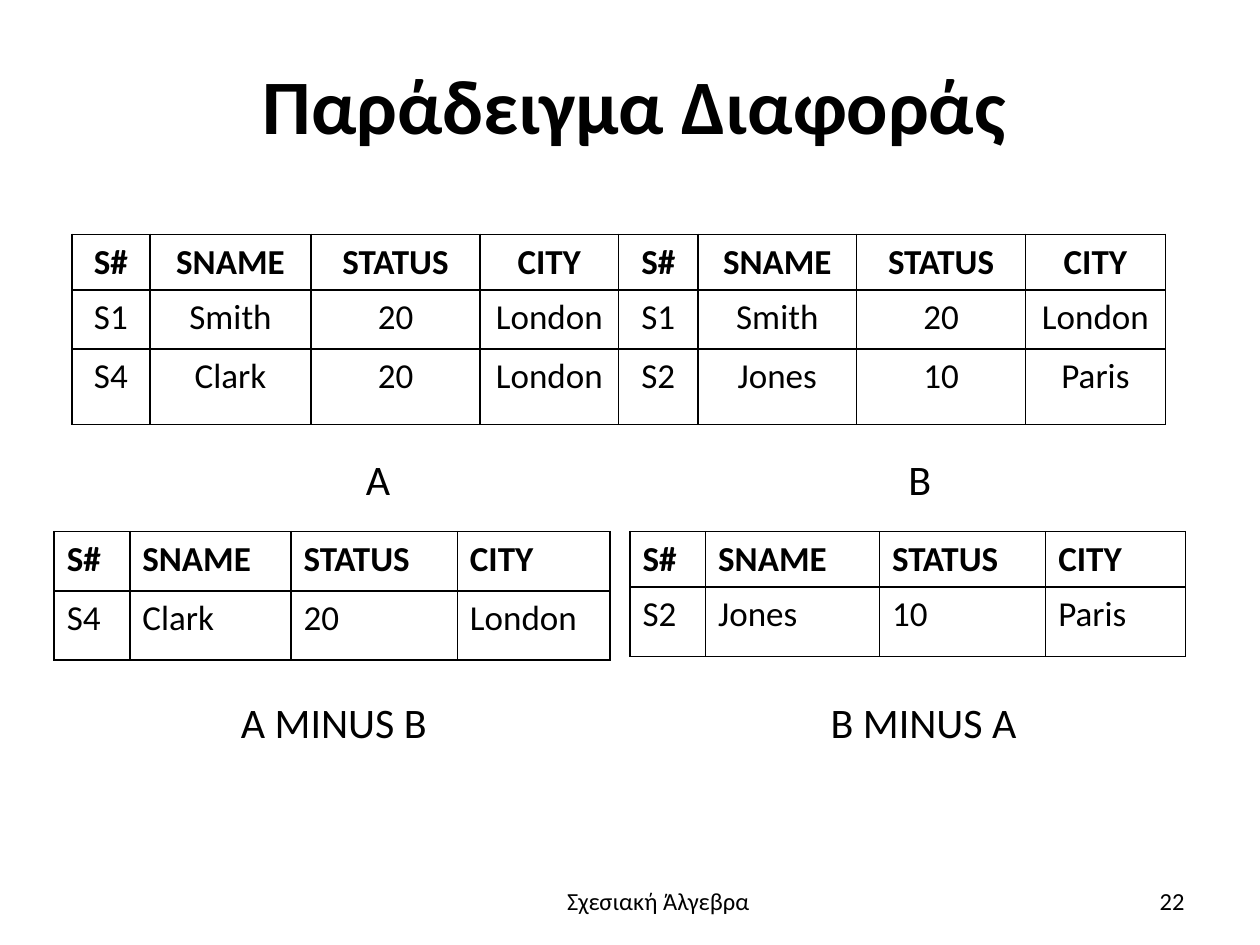
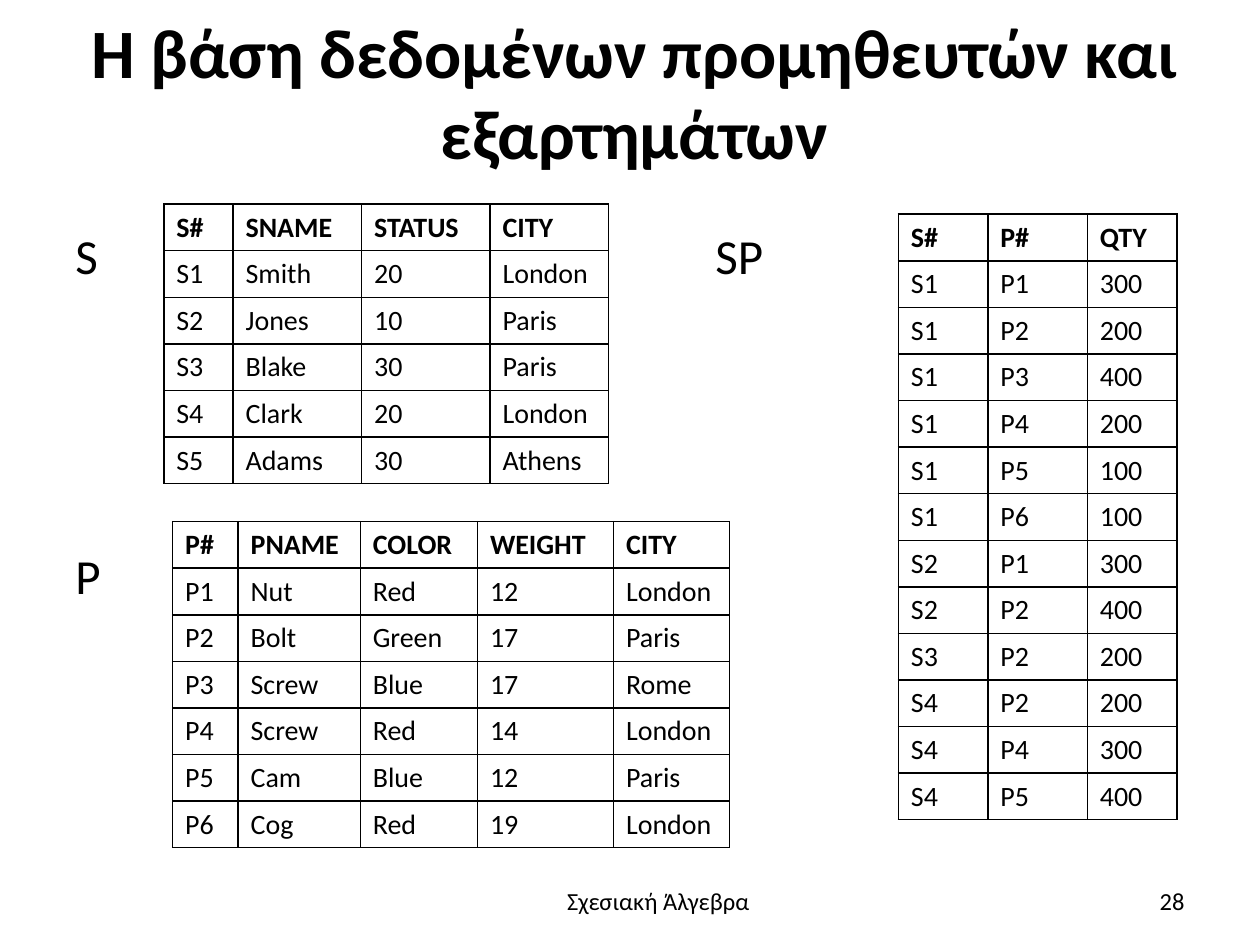
from lxml import etree
from pptx import Presentation
from pptx import util as u
from pptx.dml import color as colors
from pptx.enum import text as t
from pptx.oxml import ns

FONT = "Calibri"
BLACK = "000000"
LEFT, CENTER, RIGHT = t.PP_ALIGN.LEFT, t.PP_ALIGN.CENTER, t.PP_ALIGN.RIGHT
TOP, MIDDLE = t.MSO_ANCHOR.TOP, t.MSO_ANCHOR.MIDDLE


def write(frame, text, size=20, bold=False, align=LEFT, color=BLACK, spacing=1.0):
    paragraph = frame.paragraphs[0]
    paragraph.alignment = align
    paragraph.line_spacing = spacing
    run = paragraph.add_run()
    run.text = text
    run.font.name = FONT
    run.font.size = u.Pt(size)
    run.font.bold = bold
    run.font.color.rgb = colors.RGBColor.from_string(color)


def outline(cell, color=BLACK, points=1):
    """Draw all four borders of a cell and leave it unfilled."""
    properties = cell._tc.get_or_add_tcPr()
    for side in ("lnL", "lnR", "lnT", "lnB"):
        line = etree.SubElement(properties, ns.qn(f"a:{side}"), w=str(u.Pt(points)))
        fill = etree.SubElement(line, ns.qn("a:solidFill"))
        etree.SubElement(fill, ns.qn("a:srgbClr"), val=color)
    cell.fill.background()


presentation = Presentation()
presentation.slide_width = u.Inches(10)
presentation.slide_height = u.Inches(7.5)
blank = presentation.slide_layouts[6]
difference = presentation.slides.add_slide(blank)
database = presentation.slides.add_slide(blank)

# Tables: slide, left, top, column widths, row heights, font size, alignment, rows
ROW = 0.37
tables = [
    (difference, 0.57, 1.86, [0.62, 1.28, 1.34, 1.1, 0.63, 1.26, 1.34, 1.11],
     [0.44, 0.47, 0.6], 20, CENTER, [
         "S# SNAME STATUS CITY S# SNAME STATUS CITY",
         "S1 Smith 20 London S1 Smith 20 London",
         "S4 Clark 20 London S2 Jones 10 Paris"]),
    (difference, 0.43, 4.22, [0.6, 1.28, 1.32, 1.21], [0.47, 0.55], 20, LEFT, [
        "S# SNAME STATUS CITY",
        "S4 Clark 20 London"]),
    (difference, 5, 4.22, [0.6, 1.38, 1.32, 1.11], [0.44, 0.55], 20, LEFT, [
        "S# SNAME STATUS CITY",
        "S2 Jones 10 Paris"]),
    (database, 1.3, 1.62, [0.55, 1.02, 1.02, 0.94], [ROW] * 6, 16, LEFT, [
        "S# SNAME STATUS CITY",
        "S1 Smith 20 London",
        "S2 Jones 10 Paris",
        "S3 Blake 30 Paris",
        "S4 Clark 20 London",
        "S5 Adams 30 Athens"]),
    (database, 1.37, 4.14, [0.52, 0.97, 0.93, 1.08, 0.92], [ROW] * 7, 16, LEFT, [
        "P# PNAME COLOR WEIGHT CITY",
        "P1 Nut Red 12 London",
        "P2 Bolt Green 17 Paris",
        "P3 Screw Blue 17 Rome",
        "P4 Screw Red 14 London",
        "P5 Cam Blue 12 Paris",
        "P6 Cog Red 19 London"]),
    (database, 7.13, 1.7, [0.71, 0.79, 0.71], [ROW] * 13, 16, LEFT, [
        "S# P# QTY",
        "S1 P1 300", "S1 P2 200", "S1 P3 400", "S1 P4 200", "S1 P5 100", "S1 P6 100",
        "S2 P1 300", "S2 P2 400",
        "S3 P2 200",
        "S4 P2 200", "S4 P4 300", "S4 P5 400"]),
]
for slide, left, top, widths, heights, size, align, rows in tables:
    table = slide.shapes.add_table(
        len(heights), len(widths), u.Inches(left), u.Inches(top),
        u.Inches(sum(widths)), u.Inches(sum(heights))).table
    table.horz_banding = False
    for column, width in zip(table.columns, widths):
        column.width = u.Inches(width)
    for row_index, (height, row) in enumerate(zip(heights, rows)):
        table.rows[row_index].height = u.Inches(height)
        for column_index, value in enumerate(row.split()):
            cell = table.cell(row_index, column_index)
            outline(cell)
            write(cell.text_frame, value, size=size, bold=row_index == 0, align=align)

# Text boxes: slide, (left, top, width, height), anchor, text, format
title = dict(bold=True, align=CENTER)
caption = dict(size=24, align=CENTER)
relation = dict(size=28)
texts = [
    (difference, (0.51, 0.17, 9.06, 1.3), MIDDLE, "Παράδειγμα Διαφοράς",
     dict(title, size=44)),
    (difference, (2.5, 3.55, 1, 0.5), MIDDLE, "Α", caption),
    (difference, (6.8, 3.55, 1, 0.5), MIDDLE, "Β", caption),
    (difference, (1.4, 5.48, 2.5, 0.5), MIDDLE, "Α MINUS Β", caption),
    (difference, (6.08, 5.48, 2.5, 0.5), MIDDLE, "Β MINUS Α", caption),
    (database, (0.43, 0.11, 9.21, 1.28), MIDDLE,
     "Η βάση δεδομένων προμηθευτών και εξαρτημάτων",
     dict(title, size=39.6, spacing=0.98)),
    (database, (0.5, 1.72, 0.6, 0.6), MIDDLE, "S", relation),
    (database, (5.58, 1.72, 0.8, 0.6), MIDDLE, "SP", relation),
    (database, (0.5, 4.26, 0.6, 0.6), MIDDLE, "P", relation),
]
for slide, number in ((difference, "22"), (database, "28")):
    texts += [
        (slide, (3.48, 6.98, 3.49, 0.55), TOP, "Σχεσιακή Άλγεβρα",
         dict(size=14, align=CENTER)),
        (slide, (7.17, 6.95, 2.33, 0.4), MIDDLE, number, dict(size=14, align=RIGHT)),
    ]
for slide, box, anchor, text, style in texts:
    frame = slide.shapes.add_textbox(*map(u.Inches, box)).text_frame
    frame.word_wrap = True
    frame.vertical_anchor = anchor
    write(frame, text, **style)

presentation.save("out.pptx")
